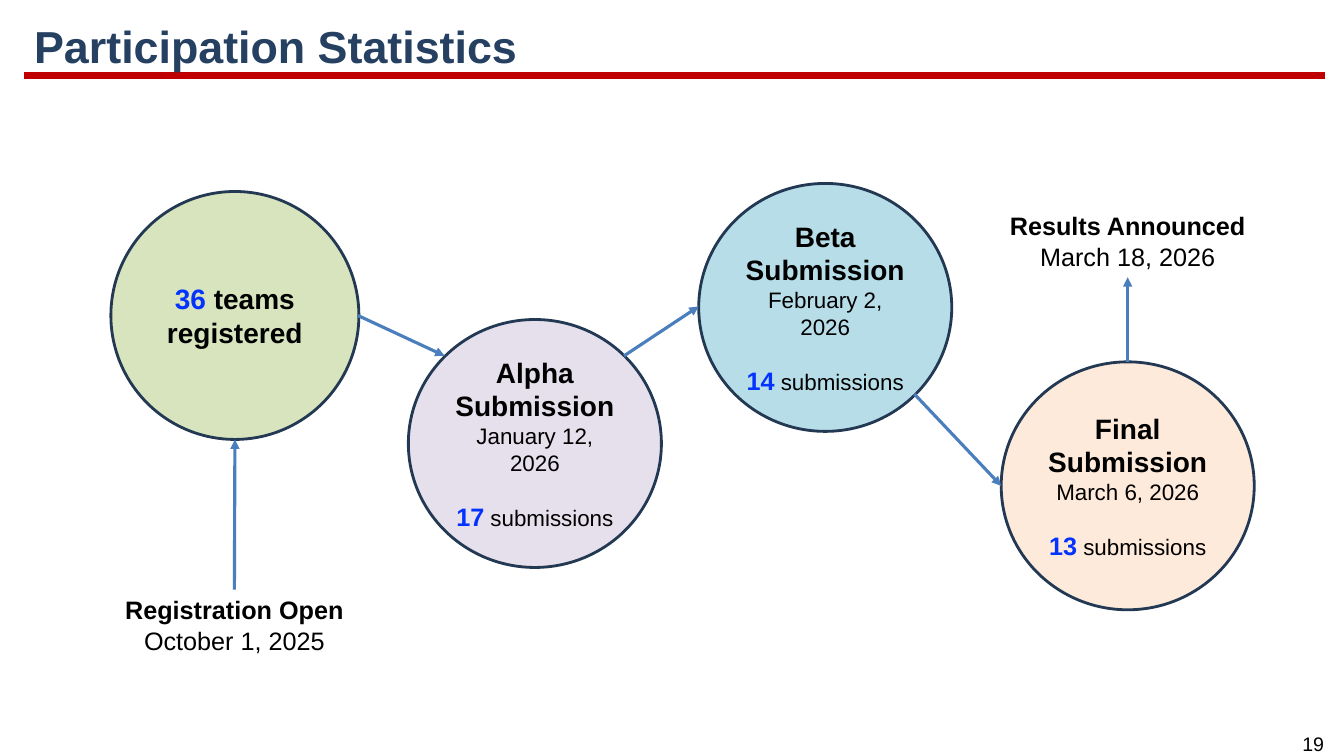
import pptx
import pptx.util
import pptx.dml.color
import pptx.enum.shapes
import pptx.enum.text
import pptx.oxml
import pptx.oxml.ns
from dataclasses import dataclass

EMU_PER_PX = 9144


@dataclass(frozen=True)
class Theme:
    font: str = "Arial"
    title: str = "254061"
    rule: str = "C00000"
    ink: str = "000000"
    count: str = "0432FF"
    outline: str = "233953"
    arrow: str = "4B7EBC"
    registered: str = "D7E4BD"
    alpha: str = "E6E0EC"
    beta: str = "B7DEE8"
    final: str = "FDEADA"
    title_size: int = 32
    heading_size: int = 20
    label_size: int = 18
    detail_size: int = 16
    number_size: int = 14


THEME = Theme()


def px(*lengths):
    return [pptx.util.Emu(length * EMU_PER_PX) for length in lengths]


def rgb(code):
    return pptx.dml.color.RGBColor.from_string(code)


def write(frame, lines, align=pptx.enum.text.PP_ALIGN.CENTER):
    frame.word_wrap = True
    for index, pieces in enumerate(lines):
        paragraph = frame.paragraphs[0] if index == 0 else frame.add_paragraph()
        paragraph.alignment = align
        for text, size, color, bold in pieces:
            run = paragraph.add_run()
            run.text = text
            run.font.name = THEME.font
            run.font.size = pptx.util.Pt(size)
            run.font.bold = bold
            run.font.color.rgb = rgb(color)


def add_label(slide, box, lines, align=pptx.enum.text.PP_ALIGN.CENTER):
    label = slide.shapes.add_textbox(*px(*box))
    write(label.text_frame, lines, align)
    return label


def add_event(slide, left, top, name, date):
    return add_label(slide, (left, top, 267, 71), [
        [(name, THEME.label_size, THEME.ink, True)],
        [(date, THEME.label_size, THEME.ink, False)],
    ])


def add_circle(slide, box, fill, lines):
    circle = slide.shapes.add_shape(pptx.enum.shapes.MSO_SHAPE.OVAL, *px(*box))
    circle.shadow.inherit = False
    circle.fill.solid()
    circle.fill.fore_color.rgb = rgb(fill)
    circle.line.color.rgb = rgb(THEME.outline)
    circle.line.width = pptx.util.Pt(2)
    circle.text_frame.vertical_anchor = pptx.enum.text.MSO_ANCHOR.MIDDLE
    write(circle.text_frame, lines)
    return circle


def add_phase(slide, left, top, fill, name, date, count):
    phase = add_circle(slide, (left, top, 251, 246), fill, [
        [(f"{name} Submission", THEME.heading_size, THEME.ink, True)],
        [(date, THEME.detail_size, THEME.ink, False)],
        [(count, THEME.label_size, THEME.count, True),
         (" submissions", THEME.detail_size, THEME.ink, False)],
    ])
    phase.text_frame.paragraphs[-1].space_before = pptx.util.Pt(18)
    return phase


def add_line(slide, start, end, color, width):
    line = slide.shapes.add_connector(
        pptx.enum.shapes.MSO_CONNECTOR.STRAIGHT, *px(*start, *end))
    line.line.color.rgb = rgb(color)
    line.line.width = pptx.util.Pt(width)
    properties = line._element.spPr
    properties.append(pptx.oxml.parse_xml(
        f"<a:effectLst {pptx.oxml.ns.nsdecls('a')}/>"))
    return line


def add_arrow(slide, start, end):
    arrow = add_line(slide, start, end, THEME.arrow, 2.25)
    arrow.line._get_or_add_ln().append(pptx.oxml.parse_xml(
        f"<a:tailEnd {pptx.oxml.ns.nsdecls('a')} type='triangle'/>"))
    return arrow


def add_frame(slide, title, number):
    add_line(slide, (24, 75), (1314, 75), THEME.rule, 4.5)
    add_label(slide, (1273, 721, 59, 34),
              [[(number, THEME.number_size, THEME.ink, False)]])
    heading = add_label(slide, (24, 16, 1291, 65),
                        [[(title, THEME.title_size, THEME.title, True)]],
                        pptx.enum.text.PP_ALIGN.LEFT)
    heading.text_frame.vertical_anchor = pptx.enum.text.MSO_ANCHOR.MIDDLE
    heading.text_frame.paragraphs[0].line_spacing = 0.9


def main():
    deck = pptx.Presentation()
    deck.slide_width, deck.slide_height = px(1333, 750)
    slide = deck.slides.add_slide(deck.slide_layouts[6])
    add_frame(slide, "Participation Statistics", "19")

    add_circle(slide, (110, 190, 246, 246), THEME.registered, [
        [("36", THEME.heading_size, THEME.count, True),
         (" teams registered", THEME.heading_size, THEME.ink, True)],
    ])
    opening = add_event(slide, 99, 585, "Registration Open", "October 1, 2025")
    add_phase(slide, 405, 317, THEME.alpha, "Alpha", "January 12, 2026", "17")
    add_phase(slide, 693, 182, THEME.beta, "Beta", "February 2, 2026", "14")
    final = add_phase(slide, 993, 359, THEME.final, "Final", "March 6, 2026", "13")
    results = add_event(slide, 985, 204, "Results Announced", "March 18, 2026")

    to_registered = add_arrow(slide, (233, 585), (233, 436))
    to_registered.begin_connect(opening, 0)
    for start, end in [((355, 313), (441, 353)),
                       ((619, 353), (693, 304)),
                       ((907, 391), (993, 482))]:
        add_arrow(slide, start, end)
    to_results = add_arrow(slide, (1119, 359), (1119, 275))
    to_results.begin_connect(final, 0)
    to_results.end_connect(results, 2)

    deck.save("out.pptx")


if __name__ == "__main__":
    main()
